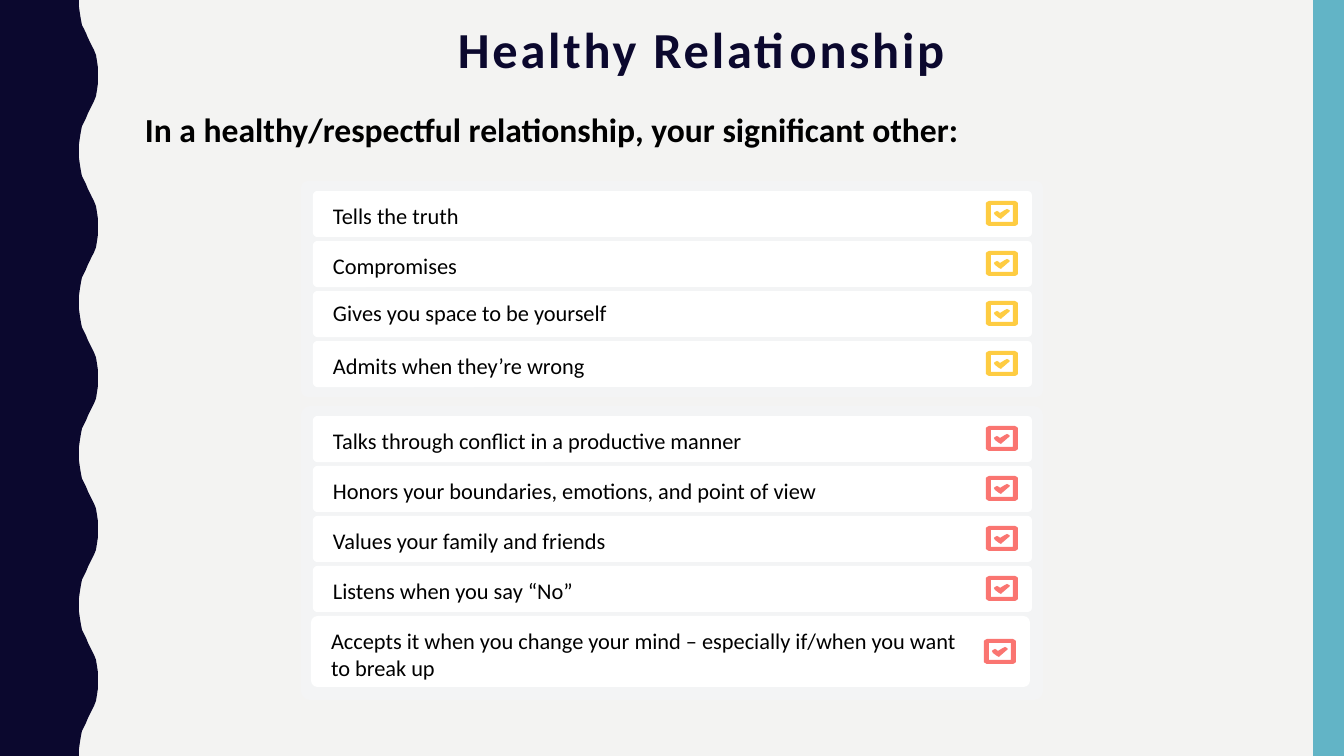
from dataclasses import dataclass

from pptx import Presentation
from pptx import util as u
from pptx.dml.color import RGBColor
from pptx.enum import shapes, text

PX = 914400 / 100.8  # EMU in one px
SLIDE_W, SLIDE_H = 1344, 756


@dataclass(frozen=True)
class Theme:
    font: str = "Calibri"
    background: str = "F3F3F2"
    navy: str = "0B082E"
    teal: str = "62B4C6"
    panel: str = "F3F4F5"
    row: str = "FFFFFF"
    yellow: str = "FECC42"
    coral: str = "FA7571"
    ink: str = "000000"
    title_size: int = 36
    lead_size: int = 24
    item_size: int = 16


THEME = Theme()

# Each item: wording, height of its row, shift of the row, shift of its text
ROW_H, TALL_ROW_H = 46, 71
YELLOW_ITEMS = [
    ("Tells the truth", ROW_H, 0, 0),
    ("Compromises", ROW_H, 0, 0),
    ("Gives you space to be yourself", ROW_H, 0, -3),
    ("Admits when they’re wrong", ROW_H, 0, 0),
]
CORAL_ITEMS = [
    ("Talks through conflict in a productive manner", ROW_H, 0, 0),
    ("Honors your boundaries, emotions, and point of view", ROW_H, 0, 0),
    ("Values your family and friends", ROW_H, 0, 0),
    ("Listens when you say “No”", ROW_H, 0, 0),
    ("Accepts it when you change your mind – especially if/when you want to break up",
     TALL_ROW_H, -2, 0),
]

# Check box outlines, in px from its top left corner
CHECK_W, CHECK_H = 32, 25
CHECK_OUTLINES = [
    [(29, 25), (3, 25), (1, 24), (0, 23), (0, 2), (1, 1),
     (3, 0), (29, 0), (31, 1), (32, 2), (32, 23), (31, 24)],
    [(5, 21), (27, 21), (27, 4), (5, 4)],
    [(16, 17), (23, 11), (24, 10), (23, 9), (21, 8), (19, 9), (14, 12),
     (13, 11), (11, 10), (9, 11), (8, 12), (9, 14), (13, 17), (15, 18)],
]

# Half a wave, from its trough to its crest
HALF_WAVE = [(79, 0), (79, 7), (80, 14), (81, 20), (82, 25), (84, 29), (86, 33), (88, 38),
             (90, 42), (92, 46), (94, 50), (96, 55), (97, 61), (98, 68)]
CREST_X, WAVES = 98, 5


def px(*lengths):
    return [u.Emu(round(n * PX)) for n in lengths]


def paint(sp, color):
    sp.fill.solid()
    sp.fill.fore_color.rgb = RGBColor.from_string(color)
    sp.line.fill.background()
    sp.shadow.inherit = False
    return sp


def add_box(parent, box, color, radius=None):
    kind = shapes.MSO_SHAPE.RECTANGLE if radius is None else shapes.MSO_SHAPE.ROUNDED_RECTANGLE
    sp = paint(parent.add_shape(kind, *px(*box)), color)
    if radius is not None:
        sp.adjustments[0] = radius
    return sp


def add_outline(parent, outlines, color):
    first, *others = [[px(*point) for point in outline] for outline in outlines]
    builder = parent.build_freeform(*first[0], scale=1.0)
    builder.add_line_segments(first[1:], close=True)
    for outline in others:
        builder.move_to(*outline[0])
        builder.add_line_segments(outline[1:], close=True)
    return paint(builder.convert_to_shape(), color)


def write(sp, words, size, color, bold=False, **frame):
    tf = sp.text_frame
    for name, value in {"word_wrap": True, **frame}.items():
        setattr(tf, name, value)
    p = tf.paragraphs[0]
    r = p.add_run()
    r.text = words
    for name, value in {"name": THEME.font, "size": u.Pt(size), "bold": bold}.items():
        setattr(r.font, name, value)
    r.font.color.rgb = RGBColor.from_string(color)
    return p, r


def add_edges(slide):
    """Wavy band on the left and plain band on the right."""
    half = SLIDE_H / WAVES / 2
    down = HALF_WAVE + [(CREST_X, half)]
    up = [(x, 2 * half - y) for x, y in reversed(HALF_WAVE)]
    edge = [(x, y + 2 * half * i) for i in range(WAVES) for x, y in down + up]
    add_outline(slide.shapes, [[(0, 0), *edge, (0, SLIDE_H)]], THEME.navy)
    add_box(slide.shapes, (1313, 0, 31, SLIDE_H), THEME.teal)


def add_title(slide, box, words):
    title = slide.shapes.title
    for name, value in zip(("left", "top", "width", "height"), px(*box)):
        setattr(title, name, value)
    p, r = write(title, words, THEME.title_size, THEME.navy, bold=True,
                 vertical_anchor=text.MSO_ANCHOR.MIDDLE, auto_size=text.MSO_AUTO_SIZE.NONE)
    p.alignment = text.PP_ALIGN.CENTER
    p.line_spacing = 0.9
    r.font._element.set("spc", "200")  # letter spacing of 2 pt


def add_lead(slide, box, words):
    sp = slide.shapes.add_textbox(*px(*box))
    write(sp, words, THEME.lead_size, THEME.ink, bold=True)


def add_row(parent, box, words, text_shift, color):
    """White row with its wording and a check box centred in its height."""
    x, y, w, h = box
    add_box(parent, box, THEME.row, 0.09)
    check_x, check_y = x + w - CHECK_W - 14, y + (h - CHECK_H) // 2
    add_outline(parent, [[(check_x + dx, check_y + dy) for dx, dy in outline]
                         for outline in CHECK_OUTLINES], color)
    sp = parent.add_textbox(*px(x + 17, y + 8 + text_shift, 643, h - 12))
    margins = dict.fromkeys(
        ("margin_left", "margin_top", "margin_right", "margin_bottom"), px(3)[0])
    write(sp, words, THEME.item_size, THEME.ink, **margins)


def add_checklist(slide, box, items, color):
    """Rounded panel holding one row for each item."""
    x, y, w, h = box
    parent = slide.shapes.add_group_shape().shapes
    add_box(parent, box, THEME.panel, 0.03)
    row_y = y + 10
    for words, row_h, row_shift, text_shift in items:
        add_row(parent, (x + 12 + row_shift, row_y, w - 23, row_h), words, text_shift, color)
        row_y += row_h + 4


def main():
    prs = Presentation()
    prs.slide_width, prs.slide_height = px(SLIDE_W, SLIDE_H)
    slide = prs.slides.add_slide(prs.slide_layouts[5])
    slide.background.fill.solid()
    slide.background.fill.fore_color.rgb = RGBColor.from_string(THEME.background)

    add_edges(slide)
    add_title(slide, (93, 0, 1217, 104), "Healthy Relationship")
    add_lead(slide, (135, 104, 1131, 50),
             "In a healthy/respectful relationship, your significant other:")
    add_checklist(slide, (301, 181, 742, 216), YELLOW_ITEMS, THEME.yellow)
    add_checklist(slide, (301, 406, 742, 294), CORAL_ITEMS, THEME.coral)
    prs.save("out.pptx")


if __name__ == "__main__":
    main()
